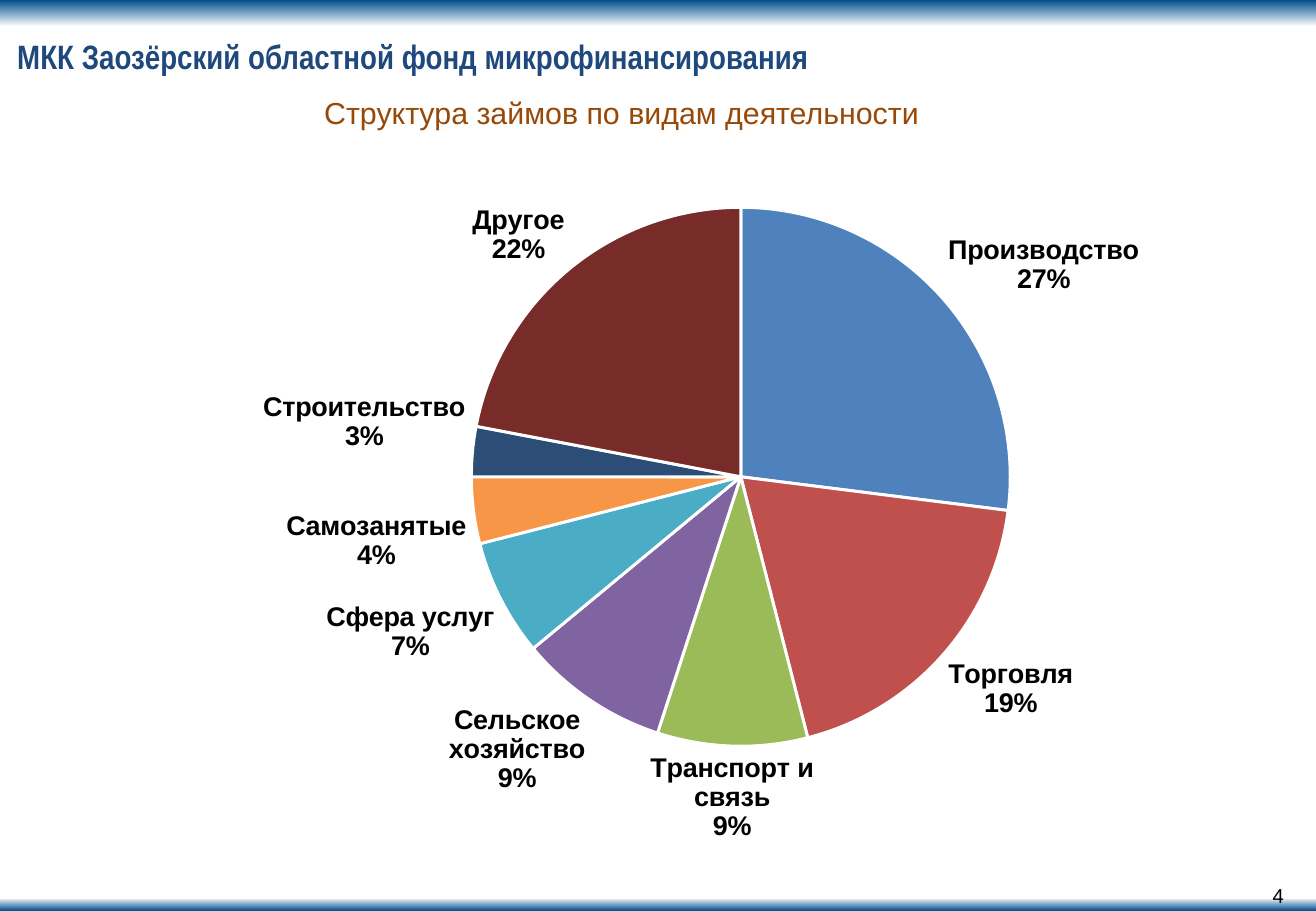
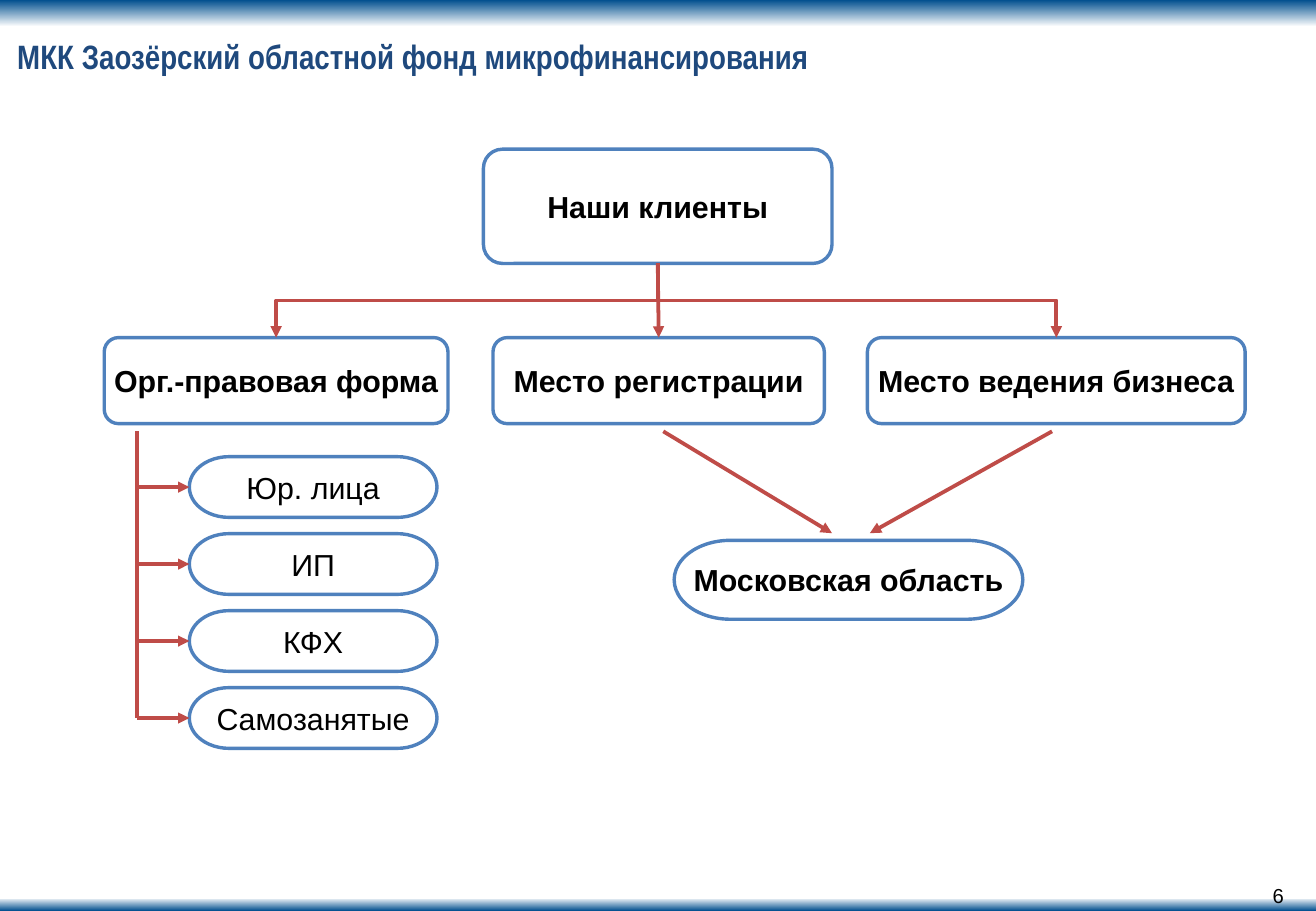
"""Build two slides on a lending fund: loan structure and client groups."""
from dataclasses import dataclass
from typing import Any

from lxml import etree
from pptx import Presentation
from pptx.chart.data import CategoryChartData
from pptx.dml.color import RGBColor
from pptx.enum import chart as charts, shapes, text
from pptx.oxml import ns
from pptx.util import Cm, Pt

NAVY = RGBColor(0x1F, 0x49, 0x7D)
DEEP = RGBColor(0x00, 0x4E, 0x8E)
BLUE = RGBColor(0x4F, 0x81, 0xBD)
RED = RGBColor(0xBF, 0x4C, 0x48)
BROWN = RGBColor(0x98, 0x48, 0x07)
BLACK = RGBColor(0, 0, 0)
WHITE = RGBColor(0xFF, 0xFF, 0xFF)

WIDE, HIGH = 27.52, 19.05
HEAD = "МКК Заозёрский областной фонд микрофинансирования"
FONT = {"name": "Arial", "size": Pt(18), "bold": False}
BARE = {f"margin_{side}": 0 for side in ("left", "top", "right", "bottom")}
MID = {"vertical_anchor": text.MSO_ANCHOR.MIDDLE}
ROUND = shapes.MSO_SHAPE.ROUNDED_RECTANGLE
PILL = shapes.MSO_SHAPE.FLOWCHART_TERMINATOR


@dataclass(frozen=True)
class Slice:
    """One part of the pie."""
    name: str
    share: int
    tint: RGBColor


@dataclass(frozen=True)
class Box:
    """A labelled outline, in centimetres."""
    label: str
    x: float
    y: float
    w: float
    h: float
    kind: Any = ROUND
    bold: bool = True

    @property
    def mid(self) -> float:
        """Horizontal centre."""
        return self.x + self.w / 2

    @property
    def axis(self) -> float:
        """Vertical centre."""
        return self.y + self.h / 2

    @property
    def base(self) -> float:
        """Lower edge."""
        return self.y + self.h


SLICES = [
    Slice("Производство", 27, BLUE),
    Slice("Торговля", 19, RGBColor(0xC0, 0x50, 0x4D)),
    Slice("Транспорт и связь", 9, RGBColor(0x9B, 0xBB, 0x59)),
    Slice("Сельское хозяйство", 9, RGBColor(0x80, 0x64, 0xA2)),
    Slice("Сфера услуг", 7, RGBColor(0x4B, 0xAC, 0xC6)),
    Slice("Самозанятые", 4, RGBColor(0xF7, 0x96, 0x46)),
    Slice("Строительство", 3, RGBColor(0x2C, 0x4D, 0x75)),
    Slice("Другое", 22, RGBColor(0x77, 0x2C, 0x2A)),
]
ROOT = Box("Наши клиенты", 10.11, 3.12, 7.29, 2.39)
FORM = Box("Орг.-правовая форма", 2.18, 7.06, 7.19, 1.8)
PLACE = Box("Место регистрации", 10.31, 7.06, 6.93, 1.8)
TRADE = Box("Место ведения бизнеса", 18.14, 7.06, 7.9, 1.8)
AREA = Box("Московская область", 14.1, 11.3, 7.29, 1.65, PILL)
KINDS = [Box(label, 3.96, 9.55 + 1.61 * i, 5.18, 1.27, PILL, False)
         for i, label in enumerate(["Юр. лица", "ИП", "КФХ", "Самозанятые"])]


def put(target: Any, **values: Any) -> None:
    """Set each value as an attribute of the target."""
    for key, value in values.items():
        setattr(target, key, value)


def style(font: Any, tint: RGBColor, **values: Any) -> None:
    """Apply the base font with changes and a colour."""
    put(font, **{**FONT, **values})
    font.color.rgb = tint


def write(frame: Any, words: str, tint: RGBColor, align: Any, **values: Any) -> None:
    """Write one styled paragraph."""
    line = frame.paragraphs[0]
    line.alignment = align
    run = line.add_run()
    run.text = words
    style(run.font, tint, **values)


def band(slide: Any, layout: Any, y: float, h: float, angle: int) -> None:
    """Add a blue fade across the layout."""
    bar = slide.shapes.add_shape(shapes.MSO_SHAPE.RECTANGLE, 0, Cm(y), Cm(WIDE), Cm(h))
    bar.shadow.inherit = False
    bar.line.fill.background()
    bar.fill.gradient()
    bar.fill.gradient_angle = angle
    for stop, tint in zip(bar.fill.gradient_stops, (DEEP, WHITE)):
        stop.color.rgb = tint
    layout.shapes.element.insert(2, bar.element)


def page(deck: Any, layout: Any, number: int) -> Any:
    """Add a slide with the shared title and its number."""
    slide = deck.slides.add_slide(layout)
    title = slide.shapes.title
    put(title, left=Cm(0.36), top=Cm(0.74), width=Cm(25.68), height=Cm(0.86))
    put(title.text_frame, word_wrap=True, **BARE, **MID)
    write(title.text_frame, HEAD, NAVY, text.PP_ALIGN.LEFT,
          name="Arial Narrow", size=Pt(20), bold=True)
    foot = slide.shapes.add_textbox(Cm(21.11), Cm(18.47), Cm(5.74), Cm(0.51))
    put(foot.text_frame, word_wrap=True, **BARE)
    write(foot.text_frame, str(number), BLACK, text.PP_ALIGN.RIGHT, size=Pt(12))
    return slide


def pie(slide: Any) -> None:
    """Draw the loan structure chart."""
    data = CategoryChartData()
    data.categories = [part.name for part in SLICES]
    data.add_series("Series 1", [part.share for part in SLICES])
    chart = slide.shapes.add_chart(charts.XL_CHART_TYPE.PIE, Cm(2.01), Cm(3.15),
                                   Cm(25.2), Cm(14.83), data).chart
    put(chart, has_legend=False, has_title=False)
    style(chart.font, BLACK, size=Pt(10))
    plot = chart.plots[0]
    plot.vary_by_categories = True
    row = plot.series[0]
    for i, part in enumerate(SLICES):
        look = row.points[i].format
        look.fill.solid()
        look.fill.fore_color.rgb = part.tint
        look.line.color.rgb = WHITE
        look.line.width = Pt(1.75)
    tags = row.data_labels
    put(tags, show_value=False, show_percentage=True, show_category_name=True,
        number_format="0%", number_format_is_linked=False,
        position=charts.XL_LABEL_POSITION.OUTSIDE_END)
    style(tags.font, BLACK, size=Pt(16), bold=True)
    last = chart.element.xpath(".//c:ser/c:dLbls/c:showPercent")[0]
    after = last.getnext()
    if after is not None and after.tag == ns.qn("c:showBubbleSize"):
        last = after
    mark = etree.Element(ns.qn("c:separator"))
    mark.text = "\n"
    last.addnext(mark)
    zone = chart.element.xpath(".//c:plotArea")[0]
    for old in zone.findall(ns.qn("c:layout")):
        zone.remove(old)
    frame = etree.Element(ns.qn("c:layout"))
    zone.insert(0, frame)
    manual = etree.SubElement(frame, ns.qn("c:manualLayout"))
    spots = {"layoutTarget": "inner", "xMode": "edge", "yMode": "edge",
             "x": "0.31", "y": "0.08", "w": "0.45", "h": "0.76"}
    for key, value in spots.items():
        etree.SubElement(manual, ns.qn(f"c:{key}")).set("val", value)


def draw(slide: Any, box: Box) -> None:
    """Draw one labelled box."""
    form = slide.shapes.add_shape(box.kind, Cm(box.x), Cm(box.y), Cm(box.w), Cm(box.h))
    form.shadow.inherit = False
    form.fill.solid()
    form.fill.fore_color.rgb = WHITE
    form.line.color.rgb = BLUE
    form.line.width = Pt(2)
    put(form.text_frame, word_wrap=False, **BARE, **MID)
    write(form.text_frame, box.label, BLACK, text.PP_ALIGN.CENTER, bold=box.bold)


def link(slide: Any, x: float, y: float, to_x: float, to_y: float,
         head: bool = True, kind: Any = shapes.MSO_CONNECTOR.STRAIGHT) -> Any:
    """Draw a red line, with an arrowhead if asked."""
    line = slide.shapes.add_connector(kind, Cm(x), Cm(y), Cm(to_x), Cm(to_y))
    line.line.color.rgb = RED
    line.line.width = Pt(2.25)
    props = line.element.spPr
    if head:
        etree.SubElement(props.find(ns.qn("a:ln")), ns.qn("a:tailEnd")).set("type", "triangle")
    etree.SubElement(props, ns.qn("a:effectLst"))
    return line


def bend(slide: Any, top: Box, low: Box) -> None:
    """Join two boxes by an elbow that leaves downwards."""
    x, y = (top.mid + low.mid) / 2, (top.base + low.y) / 2
    half, drop = abs(low.mid - top.mid) / 2, (low.y - top.base) / 2
    right = low.mid > top.mid
    side = drop if right else -drop
    line = link(slide, x + side, y - half, x - side, y + half,
                kind=shapes.MSO_CONNECTOR.ELBOW)
    turn = 270 if right else 90
    line.element.spPr.find(ns.qn("a:xfrm")).set("rot", str(turn * 60000))


def loans(slide: Any) -> None:
    """Fill the loan structure slide."""
    pie(slide)
    note = slide.shapes.add_textbox(Cm(6.53), Cm(1.85), Cm(13.79), Cm(1.02))
    note.text_frame.word_wrap = True
    write(note.text_frame, "Структура займов по видам деятельности", BROWN,
          text.PP_ALIGN.LEFT)


def clients(slide: Any) -> None:
    """Fill the client groups slide."""
    for box in [ROOT, FORM, PLACE, TRADE, AREA, *KINDS]:
        draw(slide, box)
    for box in (TRADE, FORM):
        bend(slide, ROOT, box)
    link(slide, ROOT.mid, ROOT.base, PLACE.mid, PLACE.y)
    stem, start = 2.87, 9.02
    for x, to_x in ((13.87, 17.4), (22, 18.19)):
        link(slide, x, start, to_x, 11.15)
    link(slide, stem, start, stem, KINDS[-1].axis, head=False)
    for box in KINDS:
        link(slide, stem, box.axis, box.x, box.axis)


def main() -> None:
    """Build and save the deck."""
    deck = Presentation()
    put(deck, slide_width=Cm(WIDE), slide_height=Cm(HIGH))
    layout = deck.slide_layouts[5]
    first, second = (page(deck, layout, number) for number in (4, 6))
    band(first, layout, 0, 0.56, 270)
    band(first, layout, HIGH - 0.28, 0.28, 90)
    loans(first)
    clients(second)
    deck.save("out.pptx")


if __name__ == "__main__":
    main()
